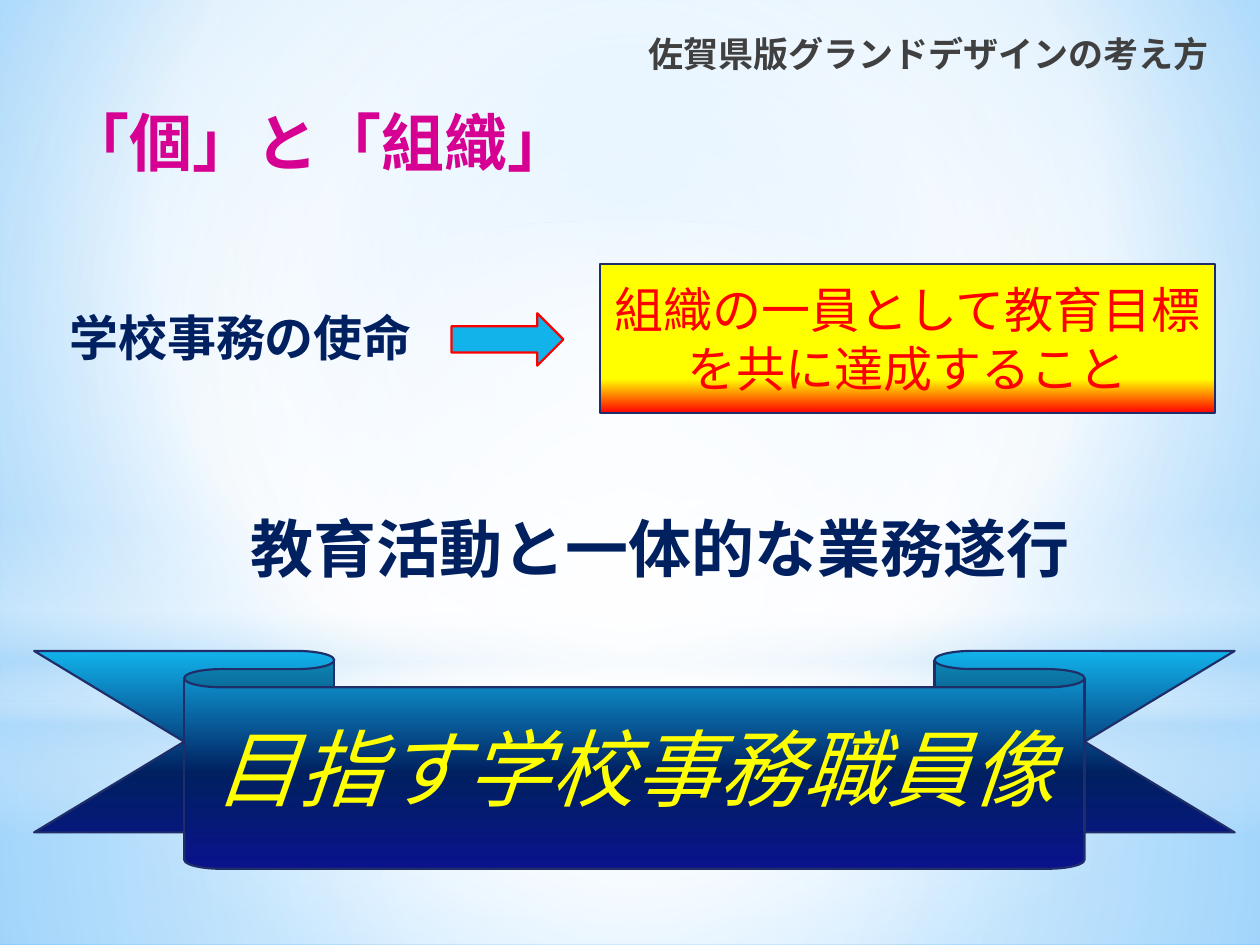
from lxml import etree
from pptx import Presentation
from pptx.dml.color import RGBColor
from pptx.enum.shapes import MSO_SHAPE
from pptx.enum.text import MSO_ANCHOR, PP_ALIGN
from pptx.oxml.ns import qn
from pptx.util import Pt

RECTANGLE, ELLIPSE = MSO_SHAPE.RECTANGLE, MSO_SHAPE.OVAL
ARROW, RIBBON = MSO_SHAPE.RIGHT_ARROW, MSO_SHAPE.DOWN_RIBBON
LEFT, CENTER, RIGHT = PP_ALIGN.LEFT, PP_ALIGN.CENTER, PP_ALIGN.RIGHT
TOP, MIDDLE = MSO_ANCHOR.TOP, MSO_ANCHOR.MIDDLE

WHITE = RGBColor(0xFF, 0xFF, 0xFF)
YELLOW = RGBColor(0xFF, 0xFF, 0x00)
RED = RGBColor(0xFF, 0x00, 0x00)
MAGENTA = RGBColor(0xD6, 0x00, 0x93)
GRAY = RGBColor(0x40, 0x40, 0x40)
NAVY = RGBColor(0x00, 0x20, 0x60)
DEEP_BLUE = RGBColor(0x0A, 0x12, 0x8C)
OUTLINE = RGBColor(0x1F, 0x2E, 0x69)
CYAN = RGBColor(0x12, 0xB2, 0xEB)
GLOW = RGBColor(0x3B, 0xCC, 0xFF)
PALE = RGBColor(0xB4, 0xDC, 0xFA)
SKY = RGBColor(0x9E, 0xD5, 0xFF)
STRONG_SKY = RGBColor(0x5B, 0xB9, 0xFF)

KARLA, NOTO = "Karla", "Noto Sans CJK JP"
CENTERED = (50, 50, 50, 50)


def add_child(parent, tag, **attributes):
    values = {name: str(value) for name, value in attributes.items()}
    return etree.SubElement(parent, qn(tag), values)


def apply_gradient(properties, stops, focus=None):
    """Replace a solid fill by (position, colour[, opacity]) stops in percent.

    The gradient is circular around focus (left, top, right, bottom), else vertical.
    """
    solid = properties.find(qn("a:solidFill"))
    gradient = etree.Element(qn("a:gradFill"), rotWithShape="1")
    stop_list = add_child(gradient, "a:gsLst")
    for position, color, *opacity in stops:
        stop = add_child(stop_list, "a:gs", pos=position * 1000)
        color_element = add_child(stop, "a:srgbClr", val=color)
        if opacity:
            add_child(color_element, "a:alpha", val=opacity[0] * 1000)
    if focus:
        circle = add_child(gradient, "a:path", path="circle")
        edges = {side: percent * 1000 for side, percent in zip("ltrb", focus)}
        add_child(circle, "a:fillToRect", **edges)
    else:
        add_child(gradient, "a:lin", ang=5400000, scaled=0)
    properties.replace(solid, gradient)


def add_filled_shape(slide, kind, box, fill, line=None, focus=None):
    """Add a shape whose fill is one colour or a list of gradient stops."""
    shape = slide.shapes.add_shape(kind, *map(Pt, box))
    shape.shadow.inherit = False
    shape.fill.solid()
    if isinstance(fill, RGBColor):
        shape.fill.fore_color.rgb = fill
    else:
        apply_gradient(shape.element.spPr, fill, focus)
    if line is None:
        shape.line.fill.background()
    else:
        shape.line.color.rgb = line
        shape.line.width = Pt(1.25)
    return shape


def write_text(shape, text, size, font_name, color, align=LEFT, bold=False,
               italic=False, anchor=TOP, wrap=True):
    frame = shape.text_frame
    frame.word_wrap = wrap
    frame.vertical_anchor = anchor
    paragraph = frame.paragraphs[0]
    paragraph.text = text
    paragraph.alignment = align
    font = paragraph.font
    font.name, font.size = font_name, Pt(size)
    font.bold, font.italic = bold, italic
    font.color.rgb = color
    properties = paragraph._p.pPr.find(qn("a:defRPr"))
    add_child(properties, "a:ea", typeface=font_name)
    return properties


def add_label(slide, box, *text, **style):
    return write_text(slide.shapes.add_textbox(*map(Pt, box)), *text, **style)


def add_backdrop(slide, width, height):
    slide.background.fill.solid()
    apply_gradient(slide.element.find(".//" + qn("p:bgPr")),
                   [(0, SKY), (60, WHITE), (100, STRONG_SKY)], (20, 10, 20, 60))
    horizon = 402
    add_filled_shape(slide, RECTANGLE, (0, horizon, width, height - horizon),
                     [(0, WHITE, 91), (37, WHITE, 76), (100, PALE, 79)], focus=CENTERED)
    add_filled_shape(slide, RECTANGLE, (0, 0, width, horizon),
                     [(0, WHITE, 89), (48, WHITE, 62), (100, PALE, 79)], focus=CENTERED)
    add_filled_shape(slide, RECTANGLE, (0, 297, width, 180),
                     [(0, WHITE, 0), (29, WHITE, 30), (45, PALE, 40),
                      (55, WHITE, 26), (65, PALE, 60), (100, WHITE, 0)])
    add_filled_shape(slide, ELLIPSE, (0, 126, width, horizon),
                     [(0, WHITE, 100), (56, WHITE, 0)], focus=CENTERED)


def add_headings(slide, left, top):
    add_label(slide, (left + 301, top, 366, 45), "佐賀県版グランドデザインの考え方",
              20, KARLA, GRAY, align=RIGHT, bold=True)
    add_label(slide, (left, top + 40.5, 386, 51), "「個」と「組織」",
              36, NOTO, MAGENTA, bold=True)


def add_mission(slide, left, top, width, height):
    add_label(slide, (left, top + 21, 231, 41), "学校事務の使命", 28, NOTO, NAVY, bold=True)
    add_filled_shape(slide, ARROW, (left + 225.5, top + 28, 64, 30), CYAN, RED)
    goal_width = 351.5
    goal = add_filled_shape(slide, RECTANGLE,
                            (left + width - goal_width, top, goal_width, height),
                            [(77, YELLOW), (100, RED)], OUTLINE)
    write_text(goal, "組織の一員として教育目標を共に達成すること", 28, NOTO, RED,
               align=CENTER, anchor=MIDDLE)


def add_banner(slide, left, top, width, height):
    ribbon = add_filled_shape(slide, RIBBON, (left, top, width, height),
                              [(0, CYAN), (56, NAVY), (100, DEEP_BLUE)], OUTLINE)
    ribbon.adjustments[0], ribbon.adjustments[1] = 0.167, 0.75
    text_width = 500
    properties = add_label(
        slide, (left + (width - text_width) / 2, top + 34, text_width, 65.5),
        "目指す学校事務職員像", 48, NOTO, YELLOW, align=CENTER, italic=True, wrap=False)
    outline = etree.Element(qn("a:ln"), w=str(Pt(1.93)))
    add_child(add_child(outline, "a:solidFill"), "a:srgbClr", val=GLOW)
    properties.insert(0, outline)


def main():
    presentation = Presentation()
    presentation.slide_width, presentation.slide_height = Pt(720), Pt(540)
    slide = presentation.slides.add_slide(presentation.slide_layouts[6])
    add_backdrop(slide, 720, 540)
    add_headings(slide, 31, 15)
    add_mission(slide, 32.5, 151, 662, 85)
    add_label(slide, (93.5, 287.5, 567.5, 51), "教育活動と一体的な業務遂行",
              36, KARLA, NAVY, align=CENTER, bold=True)
    add_banner(slide, 19.5, 372, 686, 124.5)
    presentation.save("out.pptx")


if __name__ == "__main__":
    main()
